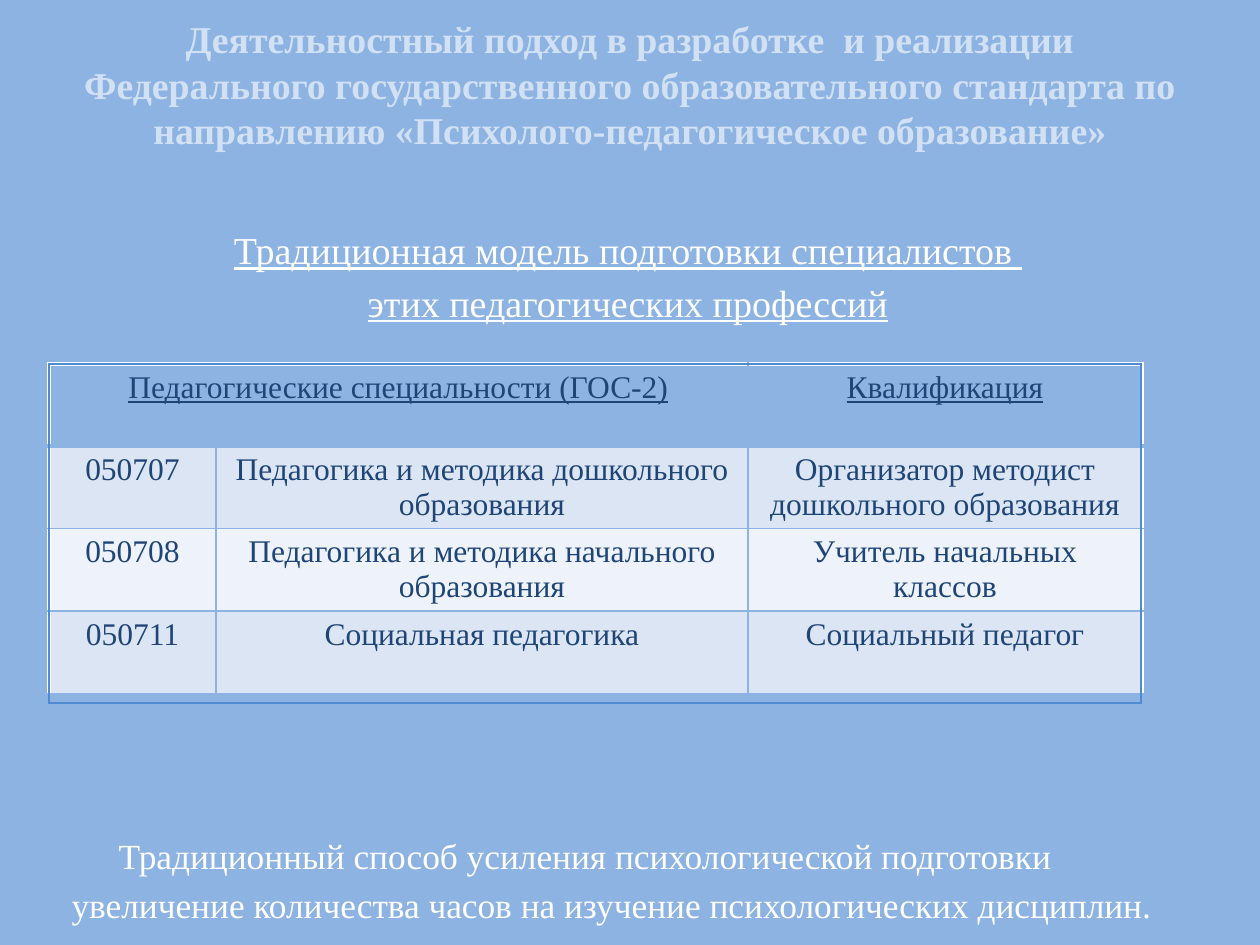
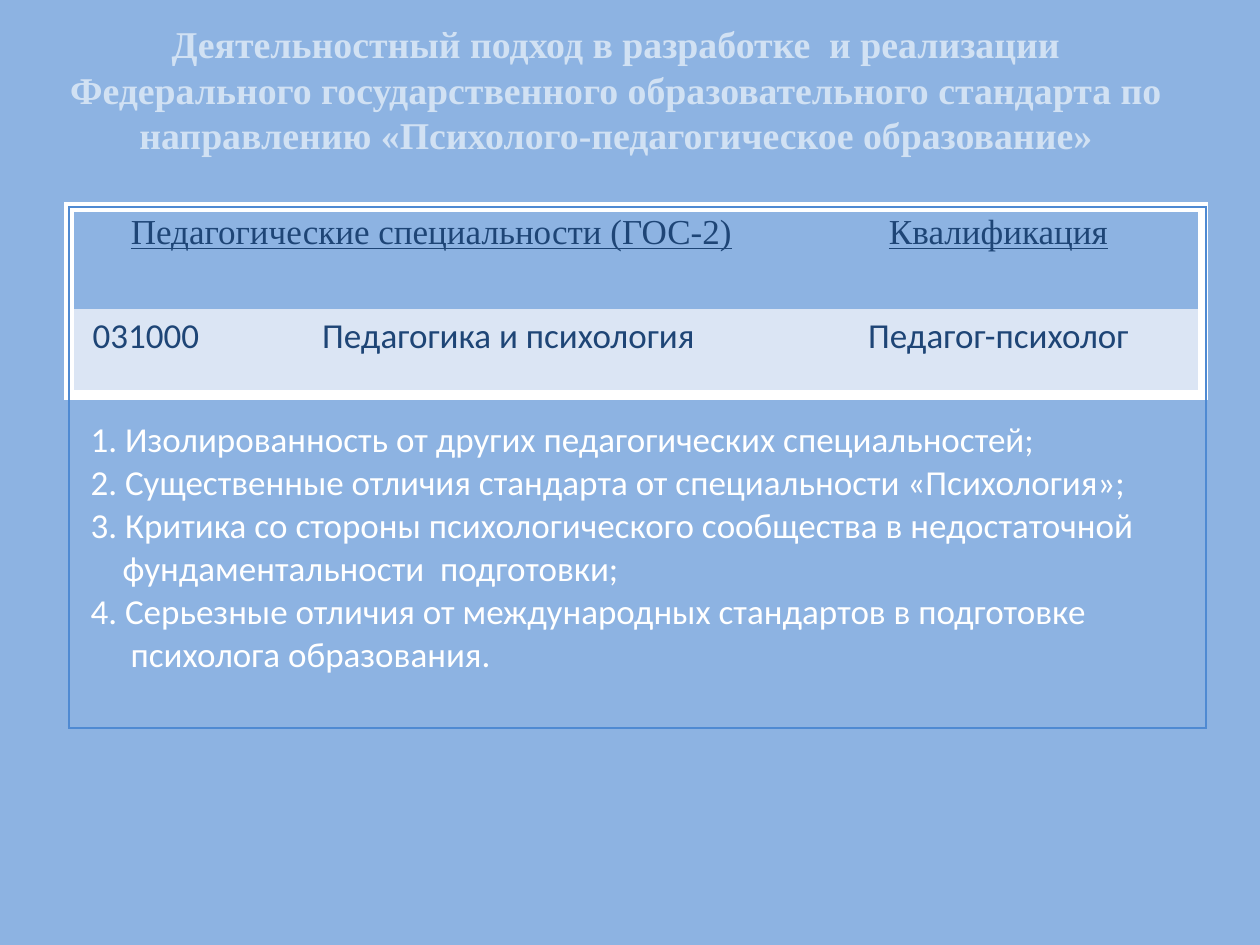
"""Build two slides on the training of teachers and psychologists."""
from dataclasses import dataclass

from lxml.etree import SubElement
from pptx import Presentation
from pptx.dml.color import RGBColor
from pptx.enum.text import MSO_ANCHOR, MSO_AUTO_SIZE, PP_ALIGN
from pptx.oxml.ns import qn
from pptx.util import Emu, Pt

HUES = {"sky": "8DB3E2", "pale": "D1E1F3", "white": "FFFFFF", "navy": "1E4576",
        "line": "4F8AD2", "odd": "DBE5F4", "even": "EEF2FA"}
SERIF, SANS = "Times New Roman", "Calibri"
PLAIN = "{2D5ABB26-0587-4C30-8999-92F81FD0307C}"
TITLE = ("Деятельностный подход в разработке  и реализации Федерального "
         "государственного образовательного стандарта по направлению "
         "«Психолого-педагогическое образование»")
HEAD = ("Педагогические специальности (ГОС-2)", "", "Квалификация")


@dataclass(frozen=True)
class Box:
    left: int
    top: int
    width: int
    height: int


@dataclass(frozen=True)
class Style:
    face: str
    size: float
    hue: str
    bold: bool = False
    under: bool = False
    align: PP_ALIGN = PP_ALIGN.CENTER


@dataclass(frozen=True)
class Line:
    text: str
    style: Style
    gap: float = 0
    margin: int = 0


@dataclass(frozen=True)
class Grid:
    box: Box
    cols: tuple
    high: tuple
    rows: tuple
    head: Style
    body: Style
    rim: float
    base: float
    inner: float
    rule: float


def px(count: int) -> Emu:
    return Emu(round(count * 914400 / 126))


def place(shape, box: Box) -> None:
    shape.left, shape.top = px(box.left), px(box.top)
    shape.width, shape.height = px(box.width), px(box.height)


def dress(para, style: Style) -> None:
    para.alignment = style.align
    font = para.font
    font.name, font.size, font.bold = style.face, Pt(style.size), style.bold
    font.underline = style.under
    font.color.rgb = RGBColor.from_string(HUES[style.hue])


def write(frame, lines: list[Line]) -> None:
    frame.text = "\n".join(line.text for line in lines)
    for para, line in zip(frame.paragraphs, lines):
        para.space_before = Pt(line.gap)
        dress(para, line.style)
        props = para._p.get_or_add_pPr()
        props.set("marL", str(px(line.margin)))
        props.set("indent", "0")
        props.insert_element_before(props.makeelement(qn("a:buNone")),
                                    "a:tabLst", "a:defRPr", "a:extLst")


def title(slide, box: Box) -> None:
    shape = slide.shapes.title
    place(shape, box)
    frame = shape.text_frame
    frame.text = TITLE
    frame.auto_size = MSO_AUTO_SIZE.NONE
    frame.vertical_anchor = MSO_ANCHOR.MIDDLE
    para = frame.paragraphs[0]
    para.line_spacing = Pt(26)
    dress(para, Style(SERIF, 21.6, "pale", bold=True))


def body(slide, box: Box, lines: list[Line]) -> None:
    shape = slide.placeholders[1]
    place(shape, box)
    shape.text_frame.auto_size = MSO_AUTO_SIZE.NONE
    write(shape.text_frame, lines)


def edge(cell, side: str, hue: str, width: float) -> None:
    props = cell._tc.get_or_add_tcPr()
    line = SubElement(props, qn(f"a:ln{side}"), w=str(Pt(width)))
    if width:
        fill = SubElement(line, qn("a:solidFill"))
        SubElement(fill, qn("a:srgbClr"), val=HUES[hue])
    else:
        SubElement(line, qn("a:noFill"))


def table(slide, box: Box, rows: int = 1, cols: int = 1):
    frame = slide.shapes.add_table(rows, cols, px(box.left), px(box.top),
                                   px(box.width), px(box.height))
    made = frame.table
    made.first_row = made.horz_banding = False
    made._tbl.tblPr.find(qn("a:tableStyleId")).text = PLAIN
    return frame


def single(slide, box: Box, width: float):
    cell = table(slide, box).table.cell(0, 0)
    for side in "LRTB":
        edge(cell, side, "line", width)
    cell.fill.background()
    return cell


def borders(cell, row: int, col: int, grid: Grid) -> None:
    last = col + cell.span_width == len(grid.cols)
    foot = row == len(grid.rows) - 1
    rim, inner = ("white", grid.rim), ("sky", grid.inner)
    rule = ("sky", grid.rule)
    edge(cell, "L", *(rim if col == 0 else inner))
    edge(cell, "R", *(rim if last else inner))
    edge(cell, "T", *(rim if row == 0 else rule if row == 1 else inner))
    edge(cell, "B", *(("white", grid.base) if foot else
                      rule if row == 0 else inner))


def draw(slide, grid: Grid) -> None:
    frame = table(slide, grid.box, len(grid.rows), len(grid.cols))
    made = frame.table
    for col, width in zip(made.columns, grid.cols):
        col.width = px(width)
    for row, height in zip(made.rows, grid.high):
        row.height = px(height)
    place(frame, grid.box)
    made.cell(0, 0).merge(made.cell(0, 1))
    for row, words in enumerate(grid.rows):
        hue = "sky" if row == 0 else "odd" if row % 2 else "even"
        for col, text in enumerate(words):
            cell = made.cell(row, col)
            if cell.is_spanned:
                continue
            borders(cell, row, col, grid)
            cell.fill.solid()
            cell.fill.fore_color.rgb = RGBColor.from_string(HUES[hue])
            cell.text = text
            dress(cell.text_frame.paragraphs[0],
                  grid.body if row else grid.head)


def models(deck) -> None:
    slide = deck.slides.add_slide(deck.slide_layouts[1])
    title(slide, Box(63, 0, 1134, 168))
    lead = Style(SERIF, 21.7, "white", under=True)
    note = Style(SERIF, 20.2, "white", align=PP_ALIGN.LEFT)
    body(slide, Box(59, 220, 1138, 710), [
        Line("Традиционная модель подготовки специалистов ", lead),
        Line("этих педагогических профессий", lead, gap=4.2),
        Line("Традиционный способ усиления психологической подготовки", note,
             gap=291, margin=47),
        Line("увеличение количества часов на изучение психологических "
             "дисциплин.", note, gap=4),
    ])
    rows = (
        HEAD,
        ("050707", "Педагогика и методика дошкольного образования",
         "Организатор методист дошкольного образования"),
        ("050708", "Педагогика и методика начального образования",
         "Учитель начальных классов"),
        ("050711", "Социальная педагогика", "Социальный педагог"),
    )
    draw(slide, Grid(Box(49, 364, 1093, 340), (167, 532, 394), (82,) * 4,
                     rows, Style(SERIF, 18, "navy", under=True),
                     Style(SERIF, 18, "navy"),
                     rim=3, base=0, inner=1, rule=3))
    single(slide, Box(49, 364, 1092, 339), 0.75)


def limits(deck) -> None:
    slide = deck.slides.add_slide(deck.slide_layouts[5])
    title(slide, Box(49, 0, 1134, 178))
    rows = (HEAD, ("031000", "Педагогика и психология", "Педагог-психолог"))
    draw(slide, Grid(Box(69, 207, 1134, 188), (154, 571, 409), (102, 86),
                     rows, Style(SERIF, 20, "navy", under=True),
                     Style(SANS, 20, "navy"),
                     rim=6, base=6, inner=0, rule=0))
    item = Style(SANS, 20, "white", align=PP_ALIGN.JUSTIFY)
    cell = single(slide, Box(78, 413, 1139, 432), 0)
    write(cell.text_frame, [
        Line("1. Изолированность от других педагогических специальностей;",
             item),
        Line("2. Существенные отличия стандарта от специальности "
             "«Психология»;", item),
        Line("3. Критика со стороны психологического сообщества в "
             "недостаточной", item),
        Line("фундаментальности  подготовки;", item, margin=32),
        Line("4. Серьезные отличия от международных стандартов в подготовке",
             item),
        Line("психолога образования.", item, margin=40),
    ])
    single(slide, Box(69, 207, 1137, 521), 0.75)


def main() -> None:
    deck = Presentation()
    deck.slide_width, deck.slide_height = px(1260), px(945)
    fill = deck.slide_master.background.fill
    fill.solid()
    fill.fore_color.rgb = RGBColor.from_string(HUES["sky"])
    models(deck)
    limits(deck)
    deck.save("out.pptx")


if __name__ == "__main__":
    main()
